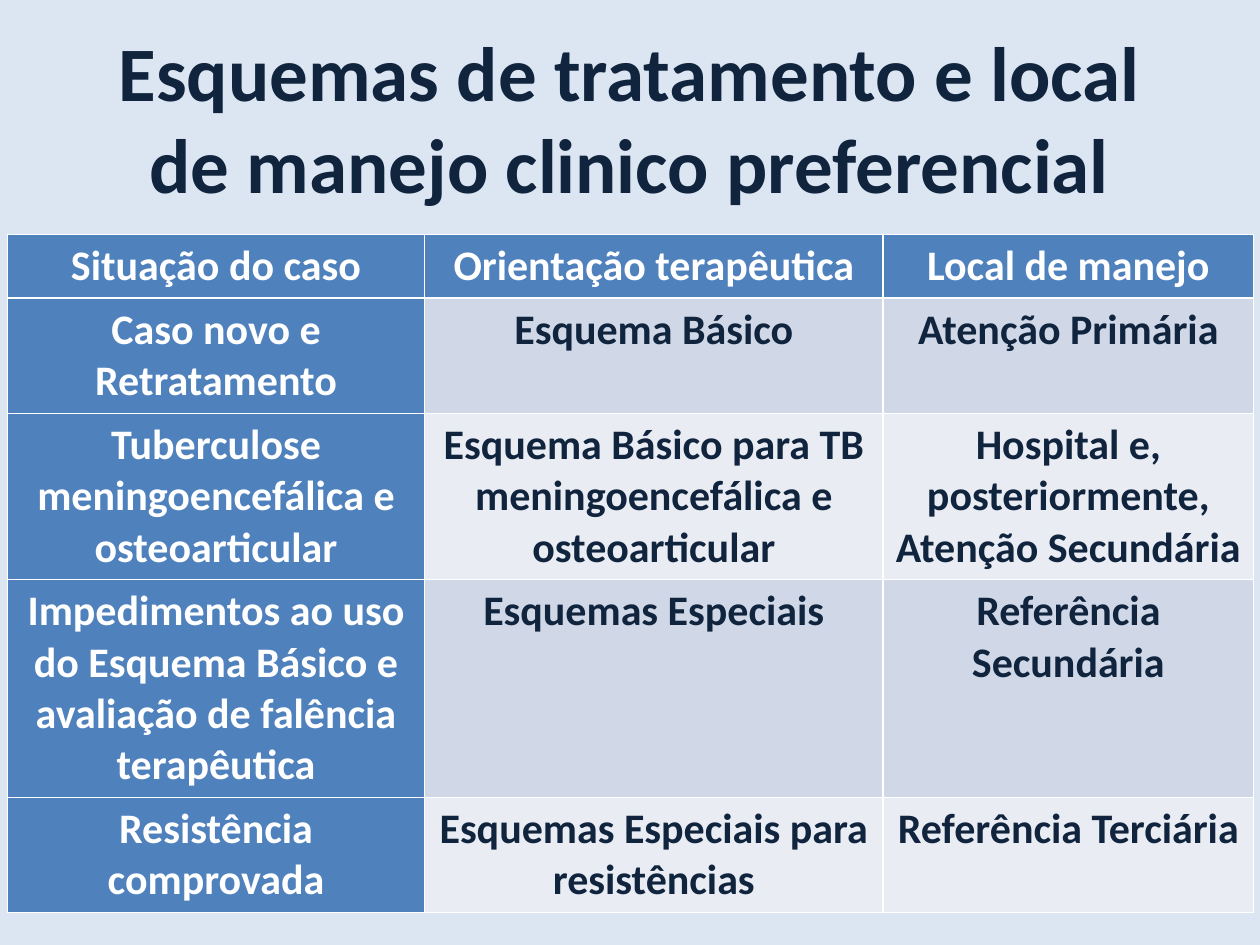
"""Build a slide with a table of treatment regimens and places of care."""
import pptx
import pptx.dml.color
import pptx.enum.text
import pptx.util

Inches = pptx.util.Inches

COLORS = {
    "background": "DCE6F2",
    "navy": "10243E",
    "white": "FFFFFF",
    "header": "4F81BD",
    "band_dark": "D0D8E7",
    "band_light": "E9ECF3",
}
TITLE = "Esquemas de tratamento e local de manejo clinico preferencial"
ROWS = [
    ("Situação do caso", "Orientação terapêutica", "Local de manejo"),
    ("Caso novo e Retratamento", "Esquema Básico", "Atenção Primária"),
    (
        "Tuberculose meningoencefálica e osteoarticular",
        "Esquema Básico para TB meningoencefálica e osteoarticular",
        "Hospital e, posteriormente, Atenção Secundária",
    ),
    (
        "Impedimentos ao uso do Esquema Básico e avaliação de falência terapêutica",
        "Esquemas Especiais",
        "Referência Secundária",
    ),
    ("Resistência comprovada", "Esquemas Especiais para resistências", "Referência Terciária"),
]
COLUMN_WIDTHS = [3.31, 3.64, 2.94]
ROW_HEIGHTS = [0.41, 0.81, 1.22, 1.63, 0.81]
MARGINS = {"margin_left": 0.07, "margin_right": 0.07, "margin_top": 0.05, "margin_bottom": 0.05}


def set_attributes(target, values):
    """Set every attribute named in a dict of format values."""
    for name, value in values.items():
        setattr(target, name, value)


def set_fill(fill, color):
    """Apply a solid fill from the palette."""
    fill.solid()
    fill.fore_color.rgb = pptx.dml.color.RGBColor.from_string(COLORS[color])


def write_text(text_frame, text, size, color):
    """Write one centred bold paragraph."""
    paragraph = text_frame.paragraphs[0]
    paragraph.alignment = pptx.enum.text.PP_ALIGN.CENTER
    run = paragraph.add_run()
    run.text = text
    set_attributes(run.font, {"name": "Calibri", "size": pptx.util.Pt(size), "bold": True})
    run.font.color.rgb = pptx.dml.color.RGBColor.from_string(COLORS[color])


def add_title(slide):
    """Place and fill the title placeholder."""
    title = slide.shapes.title
    set_attributes(title, {
        "left": Inches(0.5), "top": Inches(0.3), "width": Inches(9), "height": Inches(1.25),
    })
    set_attributes(title.text_frame, {
        "word_wrap": True,
        "auto_size": pptx.enum.text.MSO_AUTO_SIZE.NONE,
        "vertical_anchor": pptx.enum.text.MSO_ANCHOR.MIDDLE,
    })
    write_text(title.text_frame, TITLE, 44, "navy")


def format_cell(cell, text, row_index, column_index):
    """Fill a cell by its role: header row or column, or banded body."""
    is_header = row_index == 0 or column_index == 0
    band = "band_dark" if row_index % 2 else "band_light"
    set_attributes(cell, {name: Inches(value) for name, value in MARGINS.items()})
    set_fill(cell.fill, "header" if is_header else band)
    write_text(cell.text_frame, text, 24, "white" if is_header else "navy")


def add_regimen_table(slide):
    """Add the table of cases, regimens and places of care."""
    frame = slide.shapes.add_table(
        len(ROWS), len(COLUMN_WIDTHS), Inches(0.06), Inches(1.86),
        Inches(sum(COLUMN_WIDTHS)), Inches(sum(ROW_HEIGHTS)),
    )
    table = frame.table
    table.first_col = True
    for column, width in zip(table.columns, COLUMN_WIDTHS):
        column.width = Inches(width)
    for row, height in zip(table.rows, ROW_HEIGHTS):
        row.height = Inches(height)
    for row_index, texts in enumerate(ROWS):
        for column_index, text in enumerate(texts):
            format_cell(table.cell(row_index, column_index), text, row_index, column_index)


def main():
    """Create the presentation and save it."""
    presentation = pptx.Presentation()
    set_attributes(presentation, {"slide_width": Inches(10), "slide_height": Inches(7.5)})
    slide = presentation.slides.add_slide(presentation.slide_layouts.get_by_name("Title Only"))
    set_fill(slide.background.fill, "background")
    add_title(slide)
    add_regimen_table(slide)
    presentation.save("out.pptx")


if __name__ == "__main__":
    main()
